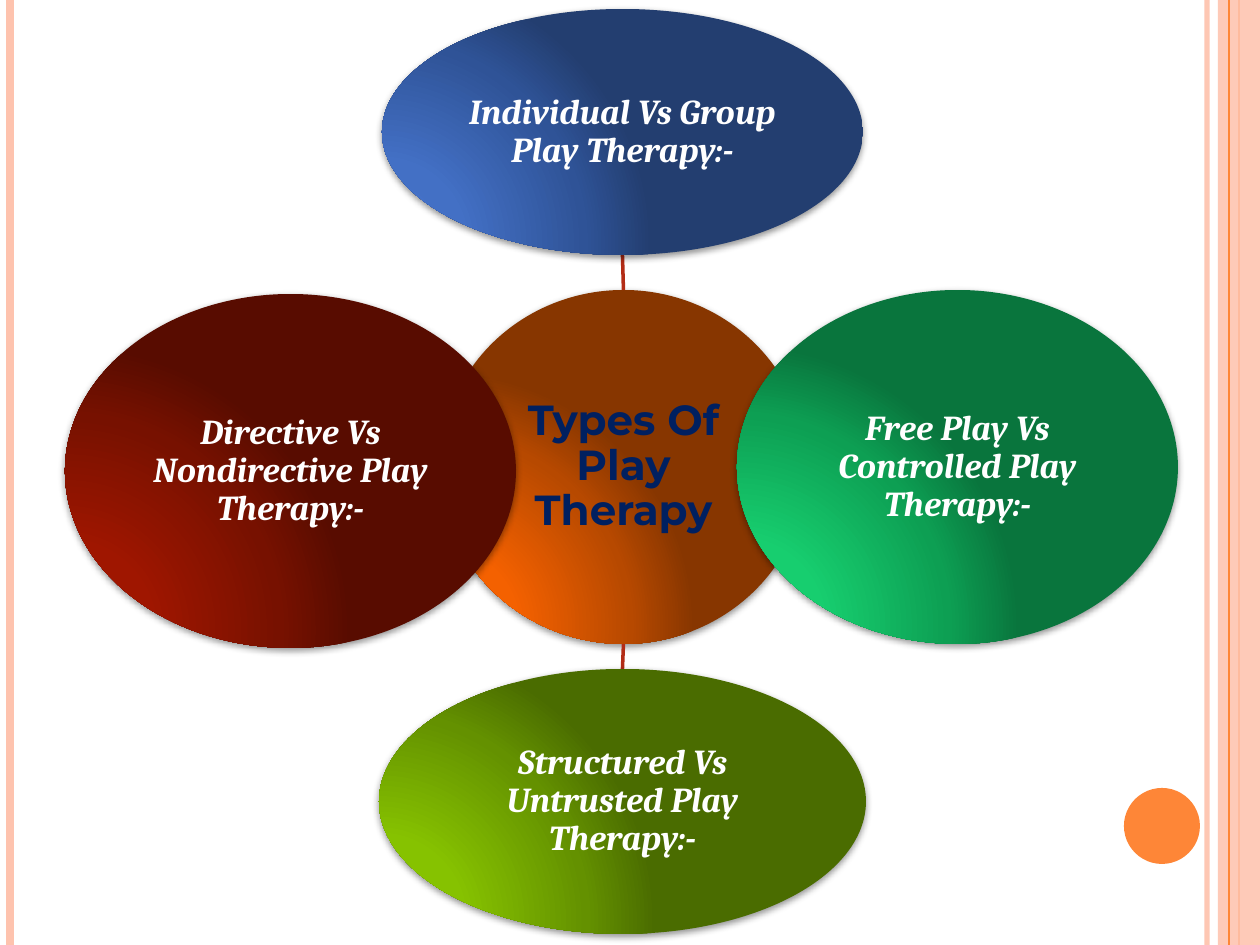
"""Build the slide on the types of play therapy: a hub with four joined ellipses."""
from lxml.etree import SubElement
from pptx import Presentation
from pptx.dml.color import RGBColor
from pptx.enum.shapes import MSO_CONNECTOR, MSO_SHAPE
from pptx.enum.text import MSO_ANCHOR, PP_ALIGN
from pptx.oxml import parse_xml
from pptx.oxml.ns import qn
from pptx.util import Pt

SCALE = 914400 / 126
WIDTH, HEIGHT = 1260, 945
NAMESPACE = 'xmlns:a="http://schemas.openxmlformats.org/drawingml/2006/main"'
COLORS = {"peach": "FEC3AE", "orange": "FE8637", "spoke": "B32C16",
          "navy": "002060", "white": "FFFFFF"}
STOPS = (0, 30, 75, 100)
HUB_FONT = {"name": "Montserrat", "size": Pt(24), "bold": True}
NODE_FONT = {"name": "Cambria", "size": Pt(20), "bold": True, "italic": True}

LEFT_STRIPE = (10, "peach", 4.5, 100)
OUTER_STRIPES = [(1207, "peach", 3, 93), LEFT_STRIPE, (1239, "orange", 1.5, 100)]
BAND = (1218, 0, 42, HEIGHT)
BAND_STRIPE = (1229, "orange", 0.75, 100)
DOT = (1124, 788, 76, 76)

HUB = ("Types Of Play Therapy", (440, 290, 367, 354),
       ("FD6400", "F46100", "B74900", "873600"))
NODES = [
    ("Individual Vs Group Play Therapy:-", (382, 9, 481, 246), (0, -1),
     ("4574CC", "4370C5", "2F5397", "233E70")),
    ("Free Play Vs Controlled Play Therapy:-", (737, 290, 441, 354), (1, 0),
     ("17D673", "17CE6F", "0D9F53", "09753D")),
    ("Structured Vs Untrusted Play Therapy:-", (379, 669, 487, 265), (0, 1),
     ("8AC900", "86C200", "649100", "4A6C00")),
    ("Directive Vs Nondirective Play Therapy:-", (65, 294, 451, 354), (-1, 0),
     ("A41700", "9F1600", "771100", "580C00")),
]


def emu(*lengths):
    return [round(length * SCALE) for length in lengths]


def paint(fill, color, alpha=100):
    fill.solid()
    fill.fore_color.rgb = RGBColor.from_string(COLORS[color])
    if alpha < 100:
        element = fill._xPr.find(qn("a:solidFill"))
        SubElement(element[0], qn("a:alpha"), val=str(alpha * 1000))


def add_line(slide, start, end, color, width, alpha=100):
    line = slide.shapes.add_connector(MSO_CONNECTOR.STRAIGHT, *emu(*start, *end))
    line.line.width = Pt(width)
    paint(line.line.fill, color, alpha)
    SubElement(line._element.spPr, qn("a:effectLst"))


def add_stripe(slide, x, color, width, alpha):
    add_line(slide, (x, 0), (x, HEIGHT), color, width, alpha)


def add_plain(slide, kind, box):
    shape = slide.shapes.add_shape(kind, *emu(*box))
    shape.shadow.inherit = False
    shape.line.fill.background()
    return shape


def add_ellipse(slide, text, box, gradient, font_values, color, inset):
    shape = add_plain(slide, MSO_SHAPE.OVAL, box)
    stops = "".join(f'<a:gs pos="{stop * 1000}"><a:srgbClr val="{shade}"/></a:gs>'
                    for stop, shade in zip(STOPS, gradient))
    properties = shape._element.spPr
    properties.find(qn("a:prstGeom")).addnext(parse_xml(
        f'<a:gradFill {NAMESPACE} rotWithShape="1"><a:gsLst>{stops}</a:gsLst>'
        '<a:path path="circle"><a:fillToRect l="5000" t="100000" r="120000" b="10000"/>'
        '</a:path></a:gradFill>'))
    properties.find(qn("a:effectLst")).append(parse_xml(
        f'<a:outerShdw {NAMESPACE} blurRad="50800" dist="20000" dir="5400000" '
        'rotWithShape="0"><a:srgbClr val="000000"><a:alpha val="42000"/></a:srgbClr>'
        '</a:outerShdw>'))
    frame = shape.text_frame
    frame.word_wrap = True
    frame.vertical_anchor = MSO_ANCHOR.MIDDLE
    for side in ("left", "top", "right", "bottom"):
        setattr(frame, f"margin_{side}", Pt(inset))
    paragraph = frame.paragraphs[0]
    paragraph.alignment = PP_ALIGN.CENTER
    paragraph.line_spacing = 0.9
    run = paragraph.add_run()
    run.text = text
    for name, value in font_values.items():
        setattr(run.font, name, value)
    run.font.color.rgb = RGBColor.from_string(COLORS[color])


def edge_point(box, direction):
    left, top, width, height = box
    across, down = direction
    return left + width * (1 + across) / 2, top + height * (1 + down) / 2


def main():
    presentation = Presentation()
    presentation.slide_width, presentation.slide_height = emu(WIDTH, HEIGHT)
    slide = presentation.slides.add_slide(presentation.slide_layouts[6])

    for stripe in OUTER_STRIPES:
        add_stripe(slide, *stripe)
    paint(add_plain(slide, MSO_SHAPE.RECTANGLE, BAND).fill, "peach", 87)
    add_stripe(slide, *BAND_STRIPE)
    paint(add_plain(slide, MSO_SHAPE.OVAL, DOT).fill, "orange")

    hub_text, hub_box, hub_gradient = HUB
    add_ellipse(slide, hub_text, hub_box, hub_gradient, HUB_FONT, "navy", 1.2)
    for text, box, (across, down), gradient in NODES:
        add_line(slide, edge_point(hub_box, (across, down)),
                 edge_point(box, (-across, -down)), "spoke", 2)
        add_ellipse(slide, text, box, gradient, NODE_FONT, "white", 1)

    presentation.save("out.pptx")


if __name__ == "__main__":
    main()
